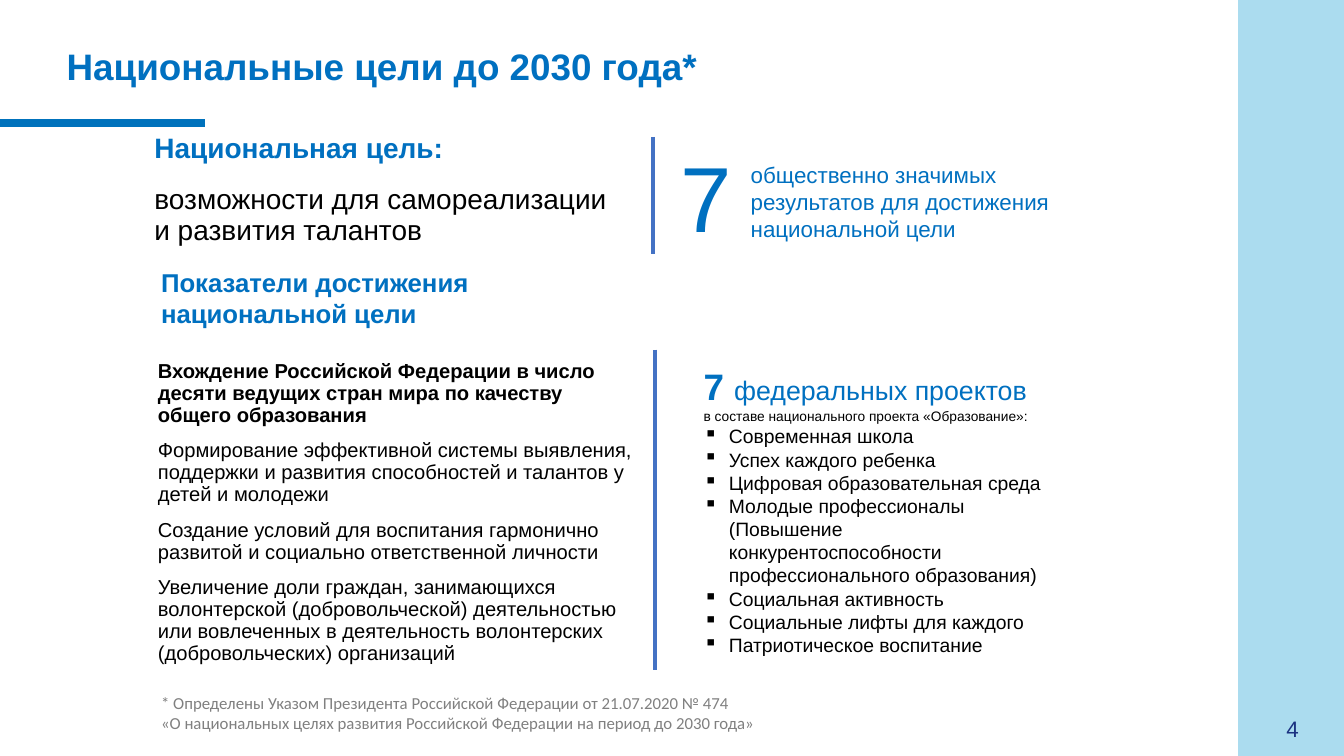
from lxml.etree import SubElement
from pptx import Presentation
from pptx.dml.color import RGBColor
from pptx.enum.shapes import MSO_CONNECTOR, MSO_SHAPE
from pptx.enum.text import MSO_ANCHOR, MSO_AUTO_SIZE, PP_ALIGN
from pptx.oxml.ns import qn
from pptx.util import Cm, Pt

BLUE, BLACK, GREY = "0070C0", "000000", "808080"
WIDE, HIGH = 33.87, 19.05


def tint(code):
    return RGBColor.from_string(code)


def add_run(para, text, size, color, bold=False, font="Arial"):
    for i, line in enumerate(text.split("\n")):
        if i:
            para.add_line_break()
        run = para.add_run()
        run.text = line
        run.font.size, run.font.bold, run.font.name = Pt(size), bold, font
        run.font.color.rgb = tint(color)


def add_para(frame, text, size=16, color=BLACK, bold=False, font="Arial",
             align=PP_ALIGN.LEFT, lead=1.0, gap=0, bullet=None):
    """Fill the empty first paragraph, or add one below."""
    first = not frame.paragraphs[0].runs
    para = frame.paragraphs[0] if first else frame.add_paragraph()
    para.alignment, para.line_spacing = align, lead
    para.space_before = Pt(0 if first else gap)
    if bullet:
        props = para._p.get_or_add_pPr()
        props.set("marL", str(Cm(0.64)))
        props.set("indent", str(-Cm(0.64)))
        SubElement(props, qn("a:buChar")).set("char", bullet)
    add_run(para, text, size, color, bold, font)
    return para


def set_frame(shape, pad=(0.25, 0.13), anchor=MSO_ANCHOR.TOP):
    frame = shape.text_frame
    frame.word_wrap, frame.auto_size = True, MSO_AUTO_SIZE.NONE
    frame.vertical_anchor = anchor
    frame.margin_left = frame.margin_right = Cm(pad[0])
    frame.margin_top = frame.margin_bottom = Cm(pad[1])
    return frame


def add_box(slide, x, y, w, h, **opts):
    return set_frame(slide.shapes.add_textbox(Cm(x), Cm(y), Cm(w), Cm(h)), **opts)


def add_line(slide, x1, y1, x2, y2, color="4472C4", width=3):
    line = slide.shapes.add_connector(
        MSO_CONNECTOR.STRAIGHT, Cm(x1), Cm(y1), Cm(x2), Cm(y2))
    line.line.color.rgb, line.line.width = tint(color), Pt(width)
    SubElement(line._element.spPr, qn("a:effectLst"))


def draw_band(slide, x, y, w, h):
    band = slide.shapes.add_shape(MSO_SHAPE.RECTANGLE, Cm(x), Cm(y), Cm(w), Cm(h))
    band.shadow.inherit = False
    band.fill.solid()
    band.fill.fore_color.rgb = tint("ABDCEF")
    band.line.fill.background()
    # Page number
    frame = add_box(slide, x + 0.36, y + h - 1.22, 2.03, 1.04, anchor=MSO_ANCHOR.MIDDLE)
    add_para(frame, "4", color="1B3281", align=PP_ALIGN.CENTER)


def draw_title(slide, x, y, w, h):
    title = slide.shapes.title
    title.left, title.top, title.width, title.height = Cm(x), Cm(y), Cm(w), Cm(h)
    frame = set_frame(title, pad=(0, 0))
    add_para(frame, "Национальные цели до 2030 года*", size=26.3, color=BLUE, bold=True)
    add_line(slide, 0, y + 2.01, 5.16, y + 2.01, color="0072BC", width=6)


def draw_goal(slide, x, y, w, h):
    # Goal
    frame = add_box(slide, x, y, 12.34, h, pad=(0.18, 0.08))
    add_para(frame, "Национальная цель:", size=20, color=BLUE, bold=True, lead=0.9)
    add_para(frame, "возможности для самореализации и развития талантов",
             size=20, lead=0.9, gap=15.2)
    add_line(slide, x + 12.75, y + 0.15, x + 12.75, y + 3.1)
    # Results
    add_para(add_box(slide, x + 13.18, y + 0.1, 1.96, 2.9), "7", size=66, color=BLUE)
    add_para(add_box(slide, x + 14.96, y + 0.64, w - 14.96, 2.46),
             "общественно значимых результатов для достижения национальной цели",
             color=BLUE)


def draw_aims(slide, x, y, w, h):
    add_para(add_box(slide, x + 0.08, y, 9.55, 1.83),
             "Показатели достижения национальной цели", size=18.4, color=BLUE, bold=True)
    aims = [
        "Вхождение Российской Федерации в число десяти ведущих стран мира "
        "по качеству общего образования",
        "Формирование эффективной системы выявления, поддержки и развития "
        "способностей и талантов у детей и молодежи",
        "Создание условий для воспитания гармонично развитой и социально "
        "ответственной личности",
        "Увеличение доли граждан, занимающихся волонтерской (добровольческой) "
        "деятельностью или вовлеченных в деятельность волонтерских "
        "(добровольческих) организаций",
    ]
    frame = add_box(slide, x, y + 2.37, w, h - 2.37)
    for i, aim in enumerate(aims):
        add_para(frame, aim, size=14.4, bold=i == 0, lead=0.9, gap=10)


def draw_list(slide, x, y, w, h):
    add_line(slide, x - 0.97, y - 0.23, x - 0.97, y + h + 0.15)
    frame = add_box(slide, x, y, w, h)
    head = add_para(frame, "7 ", size=26.3, color=BLUE, bold=True)
    add_run(head, "федеральных проектов", 19.1, BLUE)
    add_para(frame, "в составе национального проекта «Образование»:", size=9.8)
    for name in (
        "Современная школа",
        "Успех каждого ребенка",
        "Цифровая образовательная среда",
        "Молодые профессионалы (Повышение конкурентоспособности "
        "профессионального образования)",
        "Социальная активность",
        "Социальные лифты для каждого",
        "Патриотическое воспитание",
    ):
        add_para(frame, name, size=13.8, bullet="▪")


def draw_note(slide, x, y, w, h):
    add_para(add_box(slide, x, y, w, h),
             "* Определены Указом Президента Российской Федерации от 21.07.2020 № 474\n"
             "«О национальных целях развития Российской Федерации на период до 2030 года»",
             size=12, color=GREY, font="Calibri")


def main():
    deck = Presentation()
    deck.slide_width, deck.slide_height = Cm(WIDE), Cm(HIGH)
    slide = deck.slides.add_slide(deck.slide_layouts[5])
    draw_band(slide, 31.2, 0, WIDE - 31.2, HIGH)
    draw_title(slide, 1.68, 1.09, 22.78, 1.12)
    draw_goal(slide, 3.71, 3.3, 23.27, 3.86)
    draw_aims(slide, 3.73, 6.6, 12.5, 10.4)
    draw_list(slide, 17.48, 9.04, 9.12, 7.7)
    draw_note(slide, 3.81, 17.32, 20.96, 1.27)
    deck.save("out.pptx")


if __name__ == "__main__":
    main()
